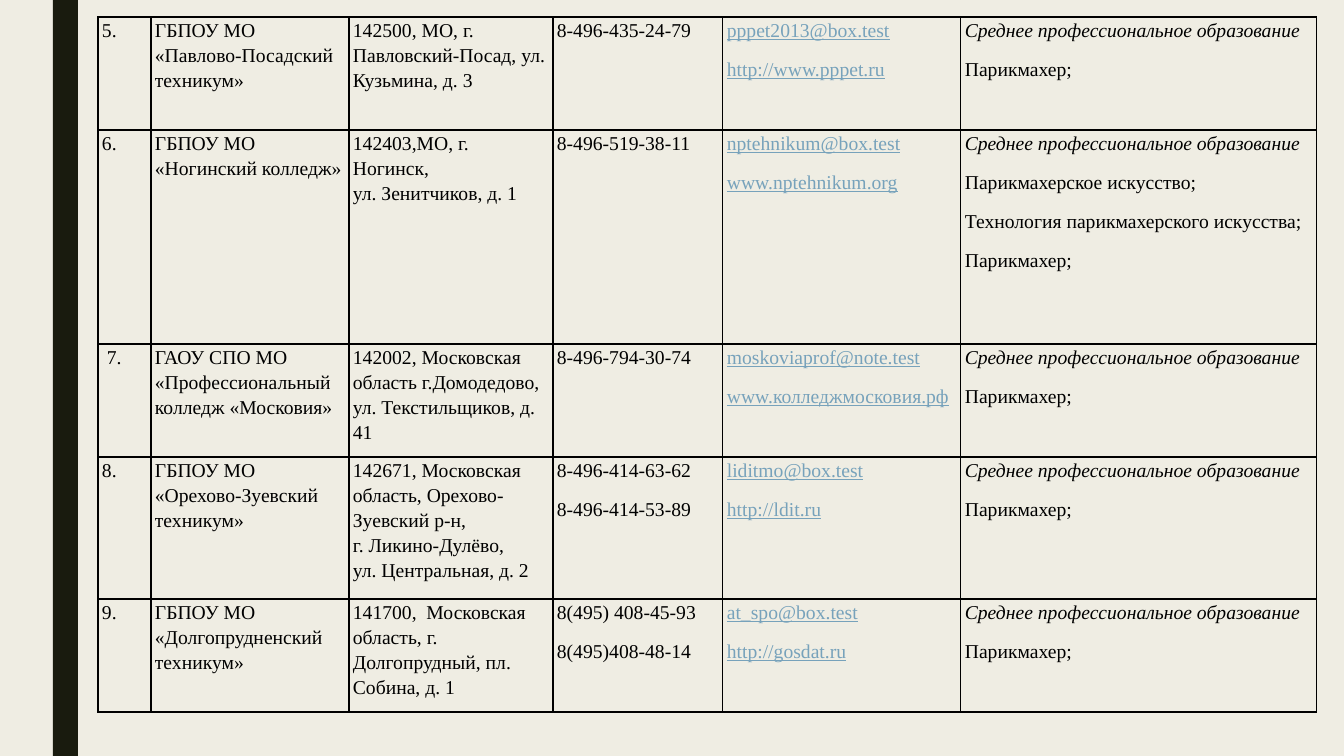
from dataclasses import dataclass

import lxml.etree
import pptx
import pptx.dml.color
import pptx.enum.shapes
import pptx.enum.text
import pptx.oxml.ns
import pptx.util

EMU_PER_PX = 914400 / 100.8


@dataclass(frozen=True)
class Theme:
    paper: str = "EFEDE3"
    bar: str = "191B0E"
    ink: str = "000000"
    link: str = "77A2BB"
    font: str = "Times New Roman"
    size: int = 14
    line_spacing: float = 1.15
    space_after: int = 10
    border: int = 1


THEME = Theme()
COLUMN_WIDTHS = [53, 198, 204, 170, 238, 356]
ROW_HEIGHTS = [113, 214, 113, 142, 113]
LEVEL = "Среднее профессиональное образование"
HAIRDRESSER = "Парикмахер;"

# number, college, address, phones, links, courses
COLLEGES = [
    ("5.", "ГБПОУ МО «Павлово-Посадский техникум»",
     ["142500, МО, г. Павловский-Посад, ул. Кузьмина, д. 3"],
     ["8-496-435-24-79"],
     ["pppet2013@box.test", "http://www.pppet.ru"],
     [HAIRDRESSER]),
    ("6.", "ГБПОУ МО «Ногинский колледж»",
     ["142403,МО, г. Ногинск,", "ул. Зенитчиков, д. 1"],
     ["8-496-519-38-11"],
     ["nptehnikum@box.test", "www.nptehnikum.org"],
     ["Парикмахерское искусство;", "Технология парикмахерского искусства;", HAIRDRESSER]),
    (" 7.", "ГАОУ СПО МО «Профессиональный колледж «Московия»",
     ["142002, Московская область г.Домодедово, ул. Текстильщиков, д. 41"],
     ["8-496-794-30-74"],
     ["moskoviaprof@note.test", "www.колледжмосковия.рф"],
     [HAIRDRESSER]),
    ("8.", "ГБПОУ МО «Орехово-Зуевский техникум»",
     ["142671, Московская область, Орехово-Зуевский р-н,", "г. Ликино-Дулёво,",
      "ул. Центральная, д. 2"],
     ["8-496-414-63-62", "8-496-414-53-89"],
     ["liditmo@box.test", "http://ldit.ru"],
     [HAIRDRESSER]),
    ("9.", "ГБПОУ МО «Долгопрудненский техникум»",
     ["141700,  Московская область, г. Долгопрудный, пл. Собина, д. 1"],
     ["8(495) 408-45-93", "8(495)408-48-14"],
     ["at_spo@box.test", "http://gosdat.ru"],
     [HAIRDRESSER]),
]


def px(length):
    return pptx.util.Emu(round(length * EMU_PER_PX))


def rgb(color):
    return pptx.dml.color.RGBColor.from_string(color)


def apply(target, formats):
    for name, value in formats.items():
        setattr(target, name, value)


def add_bar(page, box):
    bar = page.shapes.add_shape(pptx.enum.shapes.MSO_SHAPE.RECTANGLE, *map(px, box))
    bar.shadow.inherit = False
    bar.fill.solid()
    bar.fill.fore_color.rgb = rgb(THEME.bar)
    bar.line.fill.background()


def draw_borders(cell):
    properties = cell._tc.get_or_add_tcPr()
    for position, side in enumerate(("lnL", "lnR", "lnT", "lnB")):
        line = lxml.etree.Element(pptx.oxml.ns.qn(f"a:{side}"),
                                  w=str(pptx.util.Pt(THEME.border)))
        fill = lxml.etree.SubElement(line, pptx.oxml.ns.qn("a:solidFill"))
        lxml.etree.SubElement(fill, pptx.oxml.ns.qn("a:srgbClr"), val=THEME.ink)
        properties.insert(position, line)


def fill_cell(cell, lines, space_after=THEME.space_after, color=THEME.ink,
              underline=False, italic_first=False,
              alignment=pptx.enum.text.PP_ALIGN.LEFT):
    apply(cell, {"margin_left": px(4), "margin_right": px(4),
                 "margin_top": 0, "margin_bottom": 0})
    cell.fill.background()
    draw_borders(cell)
    frame = cell.text_frame
    for index, text in enumerate(lines):
        para = frame.add_paragraph() if index else frame.paragraphs[0]
        apply(para, {"alignment": alignment, "line_spacing": THEME.line_spacing,
                     "space_before": pptx.util.Pt(0),
                     "space_after": pptx.util.Pt(space_after)})
        span = para.add_run()
        span.text = text
        apply(span.font, {"name": THEME.font, "size": pptx.util.Pt(THEME.size),
                          "bold": False, "underline": underline,
                          "italic": italic_first and index == 0})
        span.font.color.rgb = rgb(color)


def add_college_table(page, left, top):
    box = (left, top, sum(COLUMN_WIDTHS), sum(ROW_HEIGHTS))
    table = page.shapes.add_table(len(ROW_HEIGHTS), len(COLUMN_WIDTHS), *map(px, box)).table
    apply(table, {"first_row": False, "horz_banding": False})
    for column, width in zip(table.columns, COLUMN_WIDTHS):
        column.width = px(width)
    for row, height, college in zip(table.rows, ROW_HEIGHTS, COLLEGES):
        row.height = px(height)
        number, name, address, phones, links, courses = college
        contents = [
            ([number], {"space_after": 0, "alignment": pptx.enum.text.PP_ALIGN.JUSTIFY}),
            ([name], {}),
            (address, {"space_after": 0}),
            (phones, {}),
            (links, {"color": THEME.link, "underline": True}),
            ([LEVEL, *courses], {"italic_first": True}),
        ]
        for cell, (lines, formats) in zip(row.cells, contents):
            fill_cell(cell, lines, **formats)


def main():
    deck = pptx.Presentation()
    apply(deck, {"slide_width": px(1344), "slide_height": px(756)})
    page = deck.slides.add_slide(deck.slide_layouts.get_by_name("Blank"))
    page.background.fill.solid()
    page.background.fill.fore_color.rgb = rgb(THEME.paper)
    add_bar(page, (53, 0, 25, 756))
    add_college_table(page, 98, 17)
    deck.save("out.pptx")


if __name__ == "__main__":
    main()
